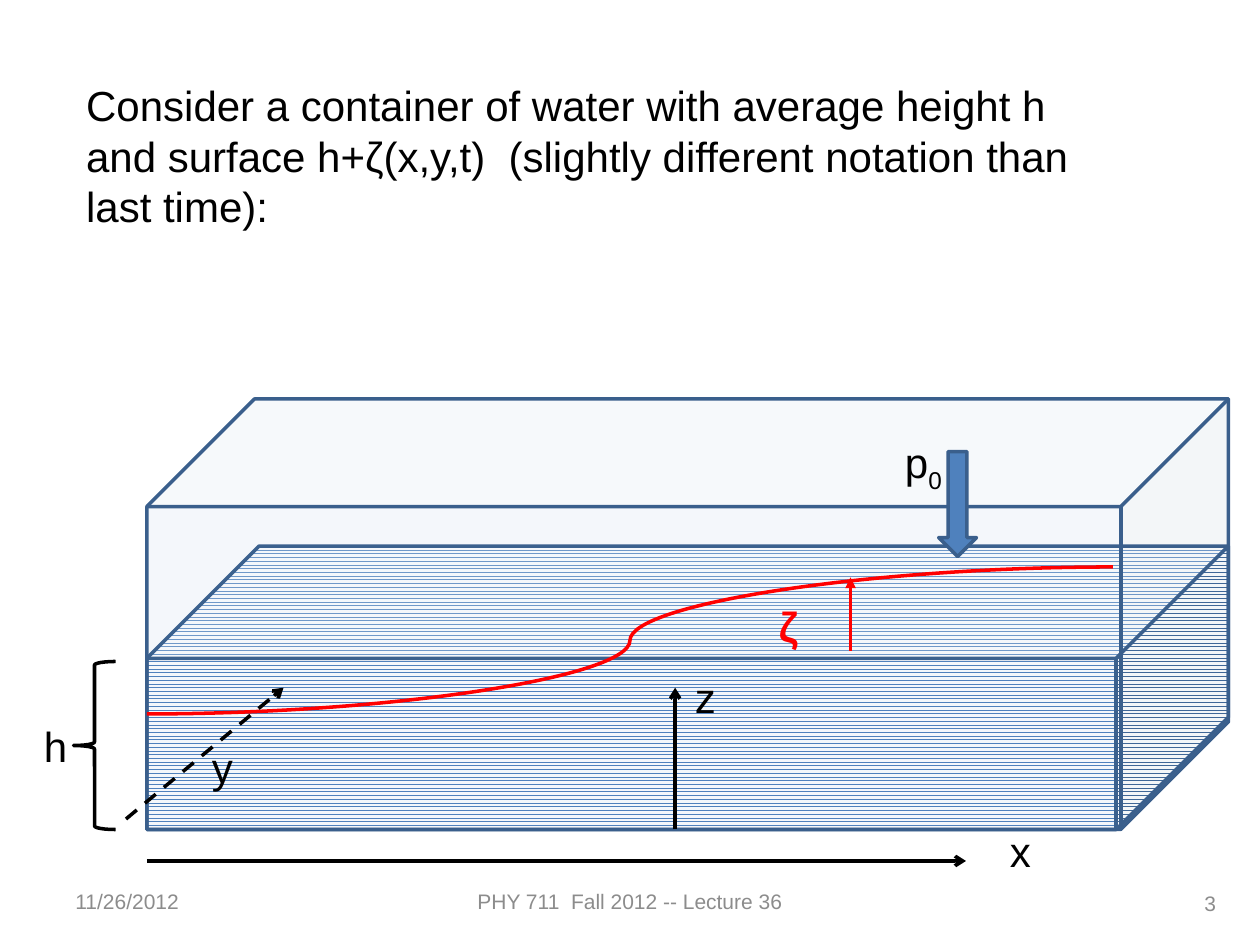
"""Build the slide that sets up surface waves in a container of water."""
from lxml import etree
from pptx import Presentation
from pptx import util as u
from pptx.dml.color import RGBColor
from pptx.enum import dml, shapes, text
from pptx.oxml import ns

BLACK = RGBColor(0x00, 0x00, 0x00)
GREY = RGBColor(0x8C, 0x8C, 0x8C)
RED = RGBColor(0xFF, 0x00, 0x00)
WHITE = RGBColor(0xFF, 0xFF, 0xFF)
WATER = RGBColor(0x4F, 0x81, 0xBD)
EDGE = RGBColor(0x3A, 0x5F, 0x8C)

GRID = u.Inches(1) // 12
LEFT, RIGHT = 14, 117
FLOOR = 79
AXIS_TOP = 65.5
LABEL_HEIGHT = 6


def cells(*counts):
    return [round(count * GRID) for count in counts]


def style_runs(frame, size, color, bold=False):
    for paragraph in frame.paragraphs:
        for run in paragraph.runs:
            run.font.name = "Arial"
            run.font.size = u.Pt(size)
            run.font.color.rgb = color
            run.font.bold = bold


def add_words(slide, words, box, size=24, color=BLACK, bold=False,
              align=text.PP_ALIGN.LEFT, anchor=text.MSO_ANCHOR.TOP):
    frame = slide.shapes.add_textbox(*cells(*box)).text_frame
    frame.word_wrap = True
    frame.vertical_anchor = anchor
    frame.text = words
    frame.paragraphs[0].alignment = align
    style_runs(frame, size, color, bold)
    return frame


def add_subscript(frame, words):
    run = frame.paragraphs[0].add_run()
    run.text = words
    style_runs(frame, 24, BLACK)
    run._r.get_or_add_rPr().set("baseline", "-25000")


def add_outlined(slide, preset, box, color=EDGE):
    outlined = slide.shapes.add_shape(preset, *cells(*box))
    outlined.shadow.inherit = False
    outlined.fill.background()
    outlined.line.color.rgb = color
    outlined.line.width = u.Pt(2)
    return outlined


def add_stroke(slide, start, end, color=BLACK, head="arrow", dash=None,
               kind=shapes.MSO_CONNECTOR.STRAIGHT):
    stroke = slide.shapes.add_connector(kind, *cells(*start, *end))
    stroke.line.color.rgb = color
    stroke.line.width = u.Pt(2)
    if dash:
        stroke.line.dash_style = dash
    if head:
        outline = stroke.line._get_or_add_ln()
        etree.SubElement(outline, ns.qn("a:tailEnd"), type=head)
    etree.SubElement(stroke._element.spPr, ns.qn("a:effectLst"))


def add_statement(slide):
    statement = slide.shapes.title
    statement.left, statement.top, statement.width, statement.height = cells(7, 7, 99, 15.75)
    frame = statement.text_frame
    frame.text = ("Consider a container of water with average height h and surface "
                  "h+ζ(x,y,t)  (slightly different notation than last time):")
    frame.word_wrap = True
    frame.auto_size = text.MSO_AUTO_SIZE.NONE
    frame.vertical_anchor = text.MSO_ANCHOR.TOP
    frame.paragraphs[0].alignment = text.PP_ALIGN.LEFT
    style_runs(frame, 24, BLACK)


def add_footer(slide):
    for words, box, align in (
            ("11/26/2012", (6, 83.4, 28, 4.8), text.PP_ALIGN.LEFT),
            ("PHY 711  Fall 2012 -- Lecture 36", (41, 83.4, 38, 4.8), text.PP_ALIGN.CENTER),
            ("3", (89, 83.65, 28, 4.8), text.PP_ALIGN.RIGHT)):
        add_words(slide, words, box, 12, GREY, align=align, anchor=text.MSO_ANCHOR.MIDDLE)


def add_container(slide):
    water_top, glass_top = 52, 38
    water = add_outlined(slide, shapes.MSO_SHAPE.CUBE,
                         (LEFT, water_top, RIGHT - LEFT, FLOOR - water_top))
    water.adjustments[0] = 0.396
    water.fill.patterned()
    water.fill.pattern = dml.MSO_PATTERN.ZIG_ZAG
    water.fill.fore_color.rgb = WATER
    water.fill.back_color.rgb = WHITE

    glass = add_outlined(slide, shapes.MSO_SHAPE.CUBE,
                         (LEFT, glass_top, RIGHT - LEFT, FLOOR - glass_top))
    glass.fill.solid()
    glass.fill.fore_color.rgb = WATER
    tint = glass._element.spPr.find(ns.qn("a:solidFill"))[0]
    etree.SubElement(tint, ns.qn("a:alpha"), val="6000")


def add_pressure(slide):
    add_subscript(add_words(slide, "p", (85, 41, 21, LABEL_HEIGHT)), "0")
    pressure = add_outlined(slide, shapes.MSO_SHAPE.DOWN_ARROW, (89.4, 43, 3.6, 10))
    pressure.fill.solid()
    pressure.fill.fore_color.rgb = WATER


def add_depth(slide):
    add_outlined(slide, shapes.MSO_SHAPE.LEFT_BRACE, (7, 63, 4, FLOOR - 63), BLACK)
    add_words(slide, "h", (3, 68, 9, LABEL_HEIGHT))


def add_axes(slide):
    dashed = dml.MSO_LINE.DASH
    for name, place, start, end, dash in (
            ("z", (65, 63.4), (64.3, FLOOR), (64.3, AXIS_TOP), None),
            ("x", (95, 78), (LEFT, 82), (92, 82), None),
            ("y", (19, 70), (12, 78), (27, AXIS_TOP), dashed)):
        add_stroke(slide, start, end, dash=dash)
        add_words(slide, name, (*place, 8, LABEL_HEIGHT))


def add_surface(slide):
    add_stroke(slide, (LEFT, 68), (106, 54), RED, head=None,
               kind=shapes.MSO_CONNECTOR.CURVE)
    add_stroke(slide, (81, 62), (81, 55), RED, head="triangle")
    add_words(slide, "ζ", (73, 56.6, 6, LABEL_HEIGHT), color=RED, bold=True)


def main():
    deck = Presentation()
    deck.slide_width, deck.slide_height = cells(120, 90)
    slide = deck.slides.add_slide(deck.slide_layouts.get_by_name("Title Only"))
    add_statement(slide)
    add_footer(slide)
    add_container(slide)
    add_pressure(slide)
    add_depth(slide)
    add_surface(slide)
    add_axes(slide)
    deck.save("out.pptx")


if __name__ == "__main__":
    main()
